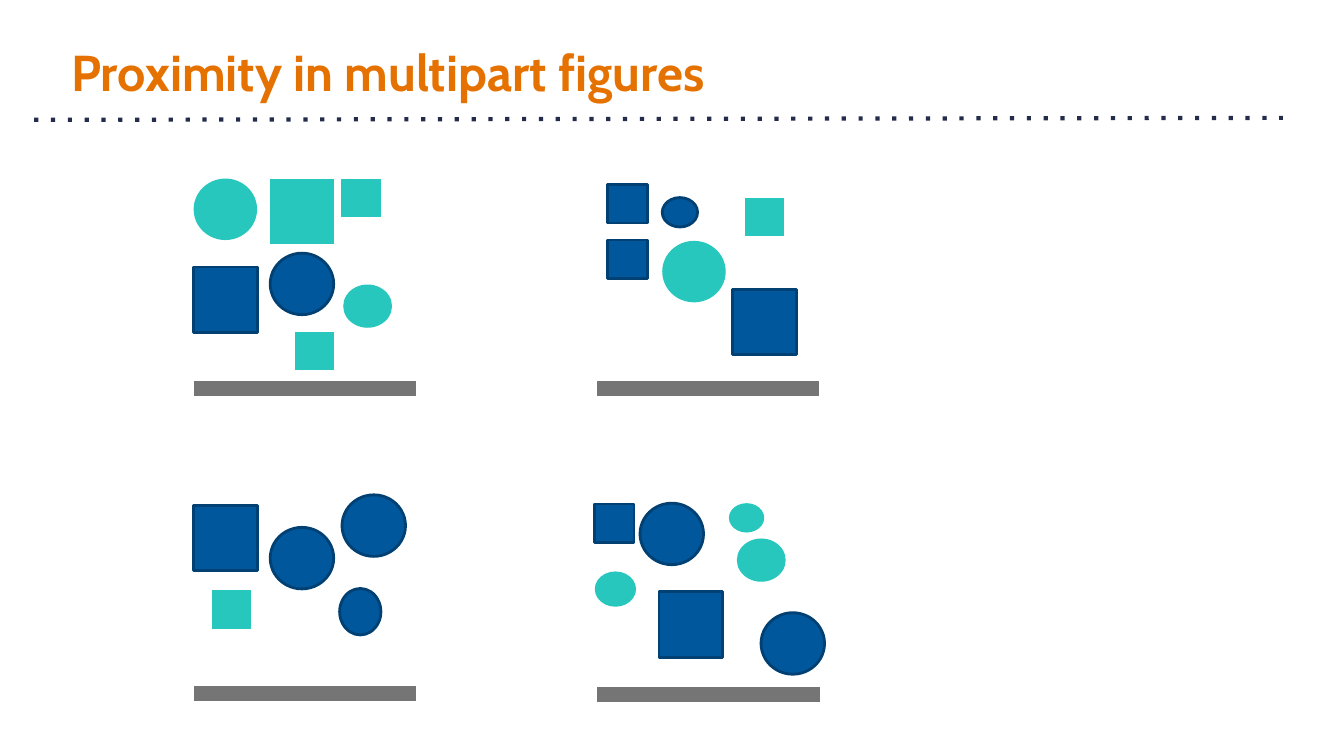
from typing import NamedTuple, Optional

from lxml.etree import SubElement
from pptx import Presentation
from pptx.dml.color import RGBColor
from pptx.enum.shapes import MSO_CONNECTOR, MSO_SHAPE
from pptx.enum.text import MSO_ANCHOR
from pptx.oxml.ns import qn
from pptx.util import Cm, Pt

BLUE, BLUE_EDGE, TEAL, GREY = "01579B", "014073", "27C7BD", "757575"
ORANGE, NAVY = "E57200", "232D4B"


class Kind(NamedTuple):
    geometry: MSO_SHAPE
    width: float
    height: float
    fill: str
    edge: Optional[str] = None


class Panel(NamedTuple):
    bar: tuple[float, float]
    marks: list[tuple[Kind, float, float]]


# Shape kinds, sizes in cm
BOX, OVAL = MSO_SHAPE.FLOWCHART_PROCESS, MSO_SHAPE.OVAL
BAR = Kind(BOX, 5.61, 0.38, GREY)
BLUE_SQUARE = Kind(BOX, 1.6, 1.65, BLUE, BLUE_EDGE)
TEAL_SQUARE = Kind(BOX, 1.6, 1.65, TEAL)
SMALL_BLUE_SQUARE = Kind(BOX, 0.99, 0.97, BLUE, BLUE_EDGE)
SMALL_TEAL_SQUARE = Kind(BOX, 0.99, 0.97, TEAL)
BLUE_CIRCLE = Kind(OVAL, 1.6, 1.55, BLUE, BLUE_EDGE)
TEAL_CIRCLE = Kind(OVAL, 1.6, 1.55, TEAL)
TALL_BLUE_OVAL = Kind(OVAL, 1.04, 1.17, BLUE, BLUE_EDGE)
SMALL_BLUE_OVAL = Kind(OVAL, 0.89, 0.74, BLUE, BLUE_EDGE)
LARGE_TEAL_OVAL = Kind(OVAL, 1.23, 1.09, TEAL)
MEDIUM_TEAL_OVAL = Kind(OVAL, 1.04, 0.89, TEAL)
SMALL_TEAL_OVAL = Kind(OVAL, 0.89, 0.74, TEAL)

# Four figure panels: bar position, then each mark with its position
PANELS = [
    Panel((4.88, 9.6), [
        (TEAL_CIRCLE, 4.88, 4.5),
        (TEAL_SQUARE, 6.81, 4.5),
        (SMALL_TEAL_SQUARE, 8.6, 4.5),
        (BLUE_SQUARE, 4.88, 6.73),
        (BLUE_CIRCLE, 6.81, 6.38),
        (LARGE_TEAL_OVAL, 8.65, 7.17),
        (SMALL_TEAL_SQUARE, 7.44, 8.36),
    ]),
    Panel((15.04, 9.6), [
        (SMALL_BLUE_SQUARE, 15.32, 4.65),
        (SMALL_BLUE_SQUARE, 15.32, 6.05),
        (SMALL_BLUE_OVAL, 16.69, 4.98),
        (TEAL_CIRCLE, 16.69, 6.07),
        (SMALL_TEAL_SQUARE, 18.77, 4.98),
        (BLUE_SQUARE, 18.47, 7.29),
    ]),
    Panel((4.88, 17.28), [
        (BLUE_SQUARE, 4.88, 12.73),
        (BLUE_CIRCLE, 6.81, 13.29),
        (BLUE_CIRCLE, 8.62, 12.47),
        (SMALL_TEAL_SQUARE, 5.34, 14.88),
        (TALL_BLUE_OVAL, 8.56, 14.83),
    ]),
    Panel((15.05, 17.3), [
        (SMALL_BLUE_SQUARE, 14.99, 12.7),
        (BLUE_CIRCLE, 16.13, 12.68),
        (SMALL_TEAL_OVAL, 18.37, 12.68),
        (LARGE_TEAL_OVAL, 18.57, 13.57),
        (MEDIUM_TEAL_OVAL, 14.99, 14.4),
        (BLUE_SQUARE, 16.61, 14.91),
        (BLUE_CIRCLE, 19.18, 15.44),
    ]),
]


def color(value: str) -> RGBColor:
    return RGBColor.from_string(value)


def add_title(s, text: str) -> None:
    tf = s.shapes.add_textbox(Cm(1.55), Cm(0.61), Cm(30.78), Cm(2.36)).text_frame
    tf.word_wrap = True
    tf.vertical_anchor = MSO_ANCHOR.MIDDLE
    tf.margin_left = tf.margin_right = tf.margin_top = tf.margin_bottom = Cm(0.25)
    r = tf.paragraphs[0].add_run()
    r.text = text
    r.font.name, r.font.size, r.font.bold = "Cabin", Pt(36), True
    r.font.color.rgb = color(ORANGE)


def add_dotted_rule(s) -> None:
    rule = s.shapes.add_connector(
        MSO_CONNECTOR.STRAIGHT, Cm(0.86), Cm(3.02), Cm(32.33), Cm(2.97))
    rule.line.color.rgb = color(NAVY)
    rule.line.width = Pt(3)
    SubElement(rule.line._get_or_add_ln(), qn("a:prstDash"), val="dot")
    SubElement(rule._element.spPr, qn("a:effectLst"))


def add_mark(s, kind: Kind, left: float, top: float) -> None:
    sp = s.shapes.add_shape(
        kind.geometry, Cm(left), Cm(top), Cm(kind.width), Cm(kind.height))
    sp.shadow.inherit = False
    sp.fill.solid()
    sp.fill.fore_color.rgb = color(kind.fill)
    if kind.edge:
        sp.line.color.rgb = color(kind.edge)
        sp.line.width = Pt(2)
    else:
        sp.line.fill.background()


def main() -> None:
    prs = Presentation()
    prs.slide_width, prs.slide_height = Cm(33.87), Cm(19.05)
    s = prs.slides.add_slide(prs.slide_layouts[6])

    # Heading
    add_dotted_rule(s)
    add_title(s, "Proximity in multipart figures")

    # Panels
    for panel in PANELS:
        for kind, left, top in panel.marks:
            add_mark(s, kind, left, top)
        add_mark(s, BAR, *panel.bar)

    prs.save("out.pptx")


if __name__ == "__main__":
    main()
